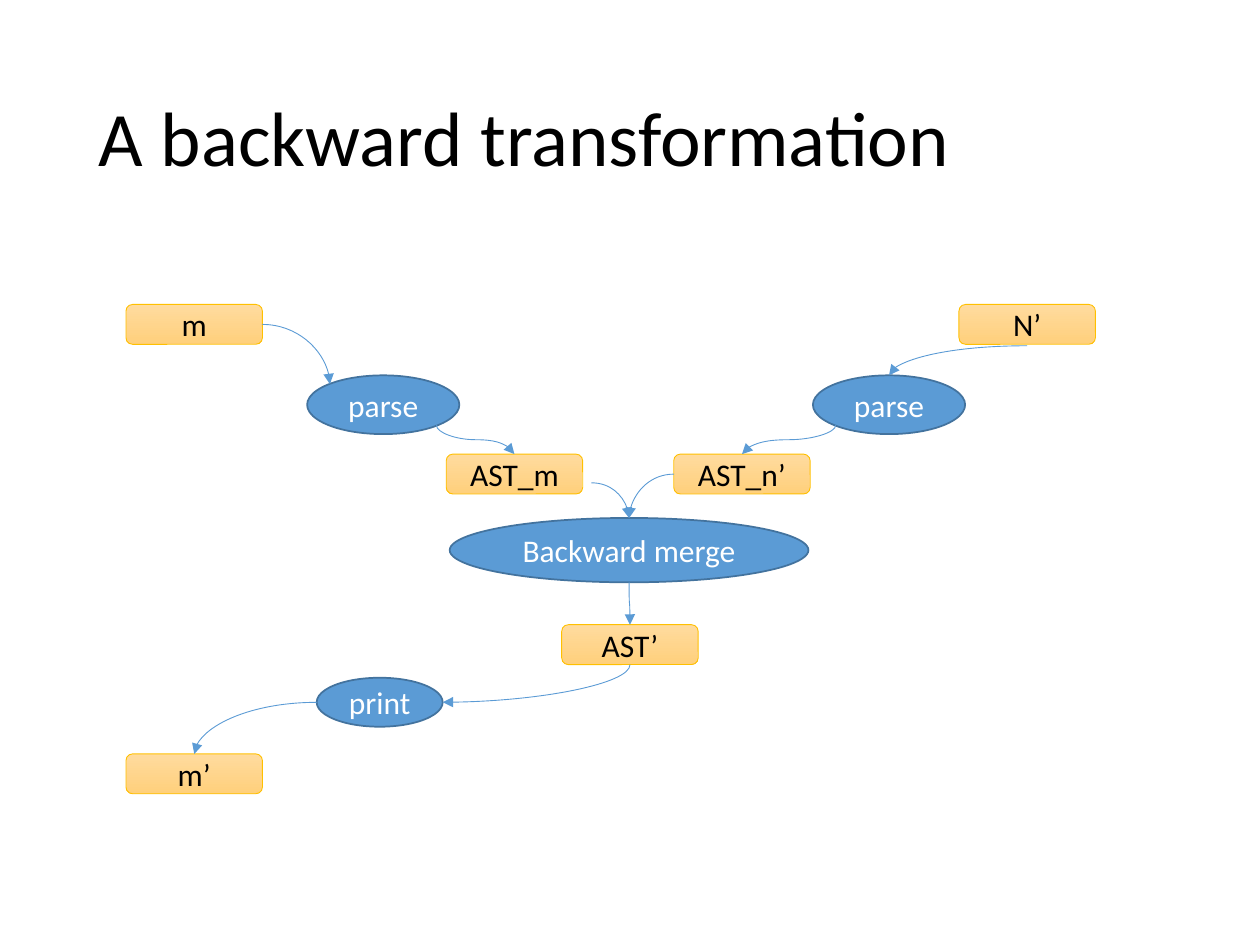
from dataclasses import dataclass

from pptx import Presentation
from pptx.dml.color import RGBColor
from pptx.enum.shapes import MSO_CONNECTOR, MSO_SHAPE
from pptx.enum.text import MSO_ANCHOR, PP_ALIGN
from pptx.oxml.ns import qn
from pptx.oxml.xmlchemy import OxmlElement
from pptx.util import Pt

ROUNDED = MSO_SHAPE.ROUNDED_RECTANGLE
ELLIPSE = MSO_SHAPE.OVAL
CURVE = MSO_CONNECTOR.CURVE
MIDDLE = MSO_ANCHOR.MIDDLE
LEFT, CENTER = PP_ALIGN.LEFT, PP_ALIGN.CENTER


@dataclass(frozen=True)
class Theme:
    font: str = "Calibri"
    title_size: float = 44
    node_size: float = 18
    dark: str = "000000"
    light: str = "FFFFFF"
    data_top: str = "FFDB9E"
    data_bottom: str = "FFD07C"
    data_line: str = "FFC000"
    step_fill: str = "5B9BD5"
    step_line: str = "43739E"
    thin: float = 0.5
    medium: float = 1


@dataclass(frozen=True)
class Node:
    text: str
    left: float
    top: float
    width: float = 78
    height: float = 22.8
    is_step: bool = False

    def point(self, anchor: tuple[float, float]) -> tuple[float, float]:
        return self.left + anchor[0] * self.width, self.top + anchor[1] * self.height


@dataclass(frozen=True)
class Link:
    source: str
    leaves: tuple[float, float]
    target: str
    enters: tuple[float, float]
    vertical: bool = False
    bends: int = 2
    nudge: float = 0


THEME = Theme()
TOP, BOTTOM = (0.5, 0), (0.5, 1)
WEST, EAST = (0, 0.5), (1, 0.5)
NORTH_WEST, SOUTH_WEST, SOUTH_EAST = (0.15, 0.15), (0.15, 0.85), (0.85, 0.85)

NODES = {
    "model": Node("m", 72, 174),
    "new_text": Node("N’", 548, 174),
    "model_tree": Node("AST_m", 255, 259.5),
    "new_tree": Node("AST_n’", 385, 259.5),
    "merged_tree": Node("AST’", 321, 357),
    "new_model": Node("m’", 72, 430.8),
    "parse_model": Node("parse", 175.5, 214.5, 87, 33.6, True),
    "merge": Node("Backward merge", 257, 296, 205, 36.8, True),
    "print": Node("print", 181, 387.3, 72, 28, True),
    "parse_new": Node("parse", 464.5, 214.5, 87, 33.6, True),
}

LINKS = [
    Link("model", EAST, "parse_model", NORTH_WEST),
    Link("parse_model", SOUTH_EAST, "model_tree", TOP, vertical=True, bends=3),
    Link("parse_new", SOUTH_WEST, "new_tree", TOP, vertical=True, bends=3),
    Link("new_text", BOTTOM, "parse_new", TOP, nudge=0.8),
    Link("model_tree", EAST, "merge", TOP, nudge=5),
    Link("new_tree", WEST, "merge", TOP),
    Link("merge", BOTTOM, "merged_tree", TOP, vertical=True, bends=3),
    Link("merged_tree", BOTTOM, "print", EAST, vertical=True),
    Link("print", WEST, "new_model", TOP),
]


def color(value: str) -> RGBColor:
    return RGBColor.from_string(value)


def write(shape, text: str, *, size: float, ink: str, align=CENTER,
          wrap: bool = False, spacing: float = 1) -> None:
    frame = shape.text_frame
    frame.word_wrap = wrap
    frame.vertical_anchor = MIDDLE
    para = frame.paragraphs[0]
    para.alignment = align
    para.line_spacing = spacing
    span = para.add_run()
    span.text = text
    span.font.name = THEME.font
    span.font.size = Pt(size)
    span.font.color.rgb = color(ink)


def draw_node(page, node: Node) -> None:
    shape = page.shapes.add_shape(
        ELLIPSE if node.is_step else ROUNDED,
        Pt(node.left), Pt(node.top), Pt(node.width), Pt(node.height))
    shape.shadow.inherit = False
    if node.is_step:
        shape.fill.solid()
        shape.fill.fore_color.rgb = color(THEME.step_fill)
    else:
        shape.fill.gradient()
        shape.fill.gradient_angle = 270
        for stop, value in zip(shape.fill.gradient_stops, (THEME.data_top, THEME.data_bottom)):
            stop.color.rgb = color(value)
    shape.line.color.rgb = color(THEME.step_line if node.is_step else THEME.data_line)
    shape.line.width = Pt(THEME.medium if node.is_step else THEME.thin)
    write(shape, node.text, size=THEME.node_size, ink=THEME.light if node.is_step else THEME.dark)


def draw_link(page, link: Link) -> None:
    start_x, start_y = NODES[link.source].point(link.leaves)
    end_x, end_y = NODES[link.target].point(link.enters)
    if link.leaves == EAST:
        start_x += link.nudge
    start_y += link.nudge
    width, height = abs(end_x - start_x), abs(end_y - start_y)
    center_x, center_y = (start_x + end_x) / 2, (start_y + end_y) / 2
    if link.vertical:
        width, height = height, width
    left, top = center_x - width / 2, center_y - height / 2
    connector = page.shapes.add_connector(
        CURVE, Pt(left), Pt(top), Pt(left + width), Pt(top + height))
    connector.line.color.rgb = color(THEME.step_fill)
    connector.line.width = Pt(THEME.thin)

    leftward = end_x < start_x
    if link.vertical:
        turn, flip = (90, None) if leftward else (270, "flipH")
    else:
        turn, flip = (180, "flipV") if leftward else (0, None)
    properties = connector._element.spPr
    transform = properties.find(qn("a:xfrm"))
    transform.set("rot", str(turn * 60000))
    if flip:
        transform.set(flip, "1")
    properties.find(qn("a:prstGeom")).set("prst", f"curvedConnector{link.bends}")
    arrow = OxmlElement("a:tailEnd")
    arrow.set("type", "triangle")
    properties.find(qn("a:ln")).append(arrow)
    properties.append(OxmlElement("a:effectLst"))


def main() -> None:
    deck = Presentation()
    deck.slide_width, deck.slide_height = Pt(720), Pt(540)
    page = deck.slides.add_slide(deck.slide_layouts[6])
    title = page.shapes.add_textbox(Pt(49.5), Pt(28.8), Pt(621), Pt(104.4))
    write(title, "A backward transformation", size=THEME.title_size, ink=THEME.dark,
          align=LEFT, wrap=True, spacing=0.9)
    for node in NODES.values():
        draw_node(page, node)
    for link in LINKS:
        draw_link(page, link)
    deck.save("out.pptx")


if __name__ == "__main__":
    main()
